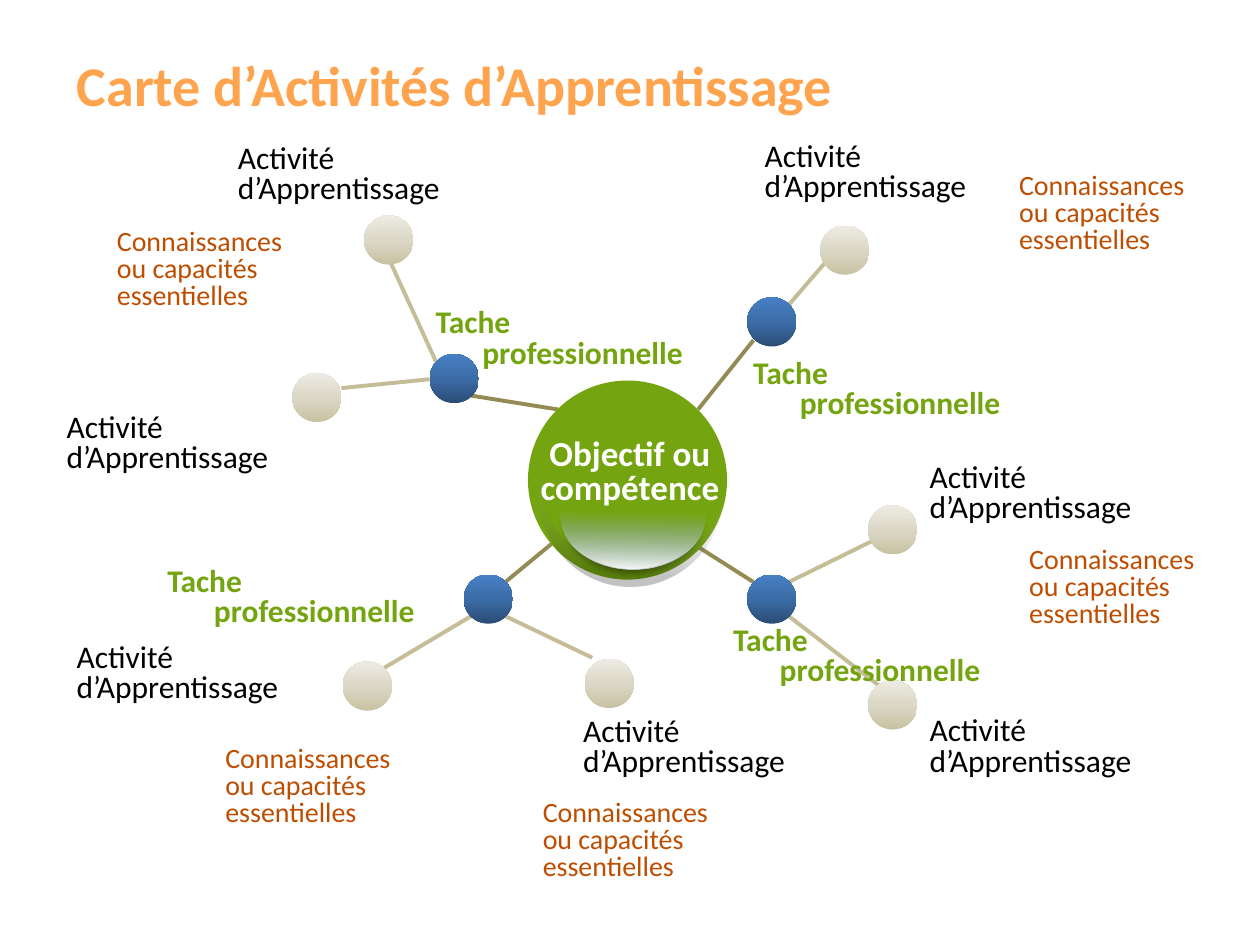
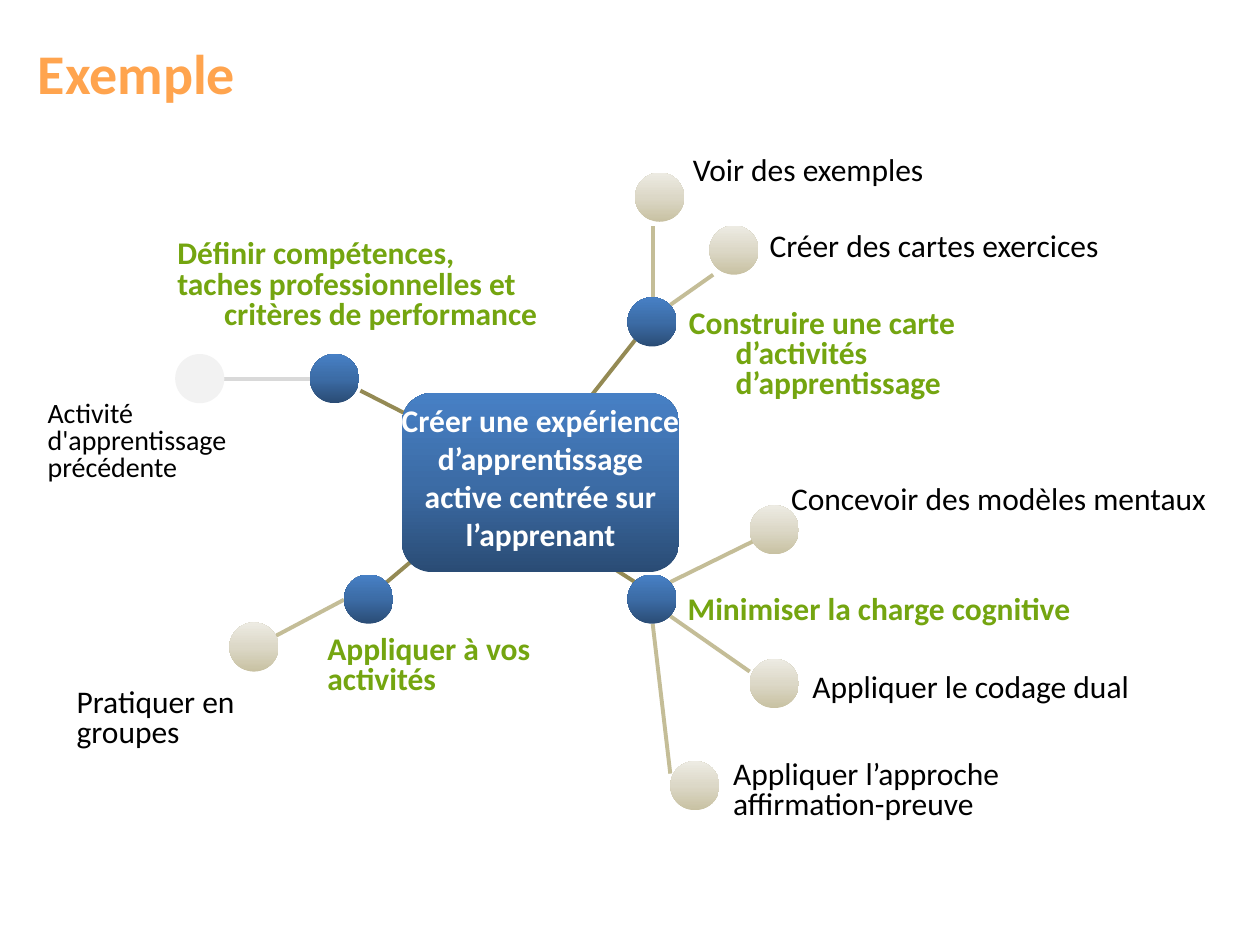
"""Build two learning-activity maps: the general model and a worked example."""
from dataclasses import dataclass

from lxml.etree import SubElement
from pptx import Presentation
from pptx.dml.color import RGBColor
from pptx.enum.shapes import MSO_CONNECTOR, MSO_SHAPE
from pptx.enum.text import MSO_ANCHOR as ANCHOR, MSO_AUTO_SIZE, PP_ALIGN as ALIGN
from pptx.oxml import parse_xml
from pptx.oxml.ns import nsdecls, qn
from pptx.util import Inches, Pt


@dataclass(frozen=True)
class Theme:
    font: str = "Calibri"
    title: str = "FFA44E"
    green: str = "74A510"
    rust: str = "BF4D00"
    black: str = "000000"
    white: str = "FFFFFF"
    pale: str = "F2F2F2"
    trunk: str = "948A54"
    branch: str = "C4BD97"
    faded: str = "D9D9D9"
    blue: tuple = ((0, "2A4C75", 100), (50, "3C6CA6", 100), (100, "4780C5", 100))
    beige: tuple = ((0, "C8C1A2", 100), (50, "DCD8C7", 100), (100, "EDEBE3", 100))
    gloss: tuple = ((0, "FFFFFF", 100), (54, "A4C4FF", 0))
    shade: tuple = ((24, "000000", 24), (100, "FFFFFF", 0))
    title_size: int = 32
    hub_size: int = 20
    size: int = 18
    small: int = 16
    line_width: float = 2.25


T = Theme()
NODE = 0.39

LABELS = {
    "task": dict(color=T.green, bold=True, hanging=True),
    "activity": dict(color=T.black, anchor=ANCHOR.MIDDLE),
    "previous": dict(color=T.black, size=T.small, anchor=ANCHOR.MIDDLE),
    "knowledge": dict(color=T.rust, size=T.small),
    "goal": dict(color=T.white, size=T.hub_size, bold=True, hanging=True, align=ALIGN.CENTER),
    "center": dict(color=T.white, bold=True, align=ALIGN.CENTER, anchor=ANCHOR.MIDDLE, spacing=1.0),
}

TASK = "Tache professionnelle"
ACTIVITY = "Activité\nd’Apprentissage"
KNOWLEDGE = "Connaissances ou capacités essentielles"

MODEL = dict(
    title=("Carte d’Activités d’Apprentissage", (0.51, 0.36, 9.25, 0.61)),
    lines={
        T.trunk: [(5.54, 3.25, 5.98, 2.7), (5.54, 4.34, 5.98, 4.62),
                  (4.41, 4.29, 4.01, 4.62), (4.43, 3.25, 3.74, 3.14)],
        T.branch: [(6.26, 2.42, 6.57, 2.06), (6.26, 4.62, 6.95, 4.28), (6.26, 4.89, 7.13, 5.56),
                   (3.74, 4.89, 3.05, 5.3), (4.01, 4.89, 4.7, 5.22),
                   (3.46, 2.87, 3.08, 2.04), (3.41, 3.01, 2.71, 3.08)],
    },
    nodes={
        T.blue: [(5.93, 2.36), (5.93, 4.56), (3.68, 4.56), (3.41, 2.81)],
        T.beige: [(6.51, 1.79), (6.89, 4.01), (6.89, 5.4), (2.72, 5.25),
                  (4.64, 5.23), (2.89, 1.71), (2.32, 2.96)],
    },
    labels=[
        *[("task", TASK, (x, y, 2.44, 0.64))
          for x, y in [(5.87, 2.81), (5.71, 4.93), (3.35, 2.41), (1.22, 4.46)]],
        *[("activity", ACTIVITY, (x, y, 2.05, h))
          for x, y, h in [(7.28, 5.56, 0.75), (4.53, 5.56, 0.76), (7.28, 3.51, 0.83),
                          (5.97, 0.99, 0.77), (1.79, 1.01, 0.76), (0.43, 3.12, 0.81),
                          (0.51, 4.95, 0.81)]],
        *[("knowledge", KNOWLEDGE, (x, y, 1.57, 0.79))
          for x, y in [(7.99, 1.33), (8.07, 4.3), (1.69, 5.88), (4.21, 6.31), (0.83, 1.78)]],
    ],
)

EXAMPLE = dict(
    title=("Exemple", (0.2, 0.07, 9.8, 1)),
    lines={
        T.trunk: [(4.63, 3.22, 5.04, 2.7), (4.6, 4.34, 5.04, 4.62),
                  (3.46, 4.29, 3.07, 4.62), (3.35, 3.35, 2.86, 3.1)],
        T.branch: [(5.32, 2.42, 5.66, 2.18), (5.32, 4.62, 6.01, 4.28), (5.32, 4.89, 5.95, 5.33),
                   (2.73, 4.76, 1.88, 5.21), (5.18, 2.36, 5.18, 1.79), (5.18, 4.95, 5.32, 6.14)],
        T.faded: [(2.46, 3.01, 1.78, 3.01)],
    },
    nodes={
        T.blue: [(4.98, 2.36), (4.98, 4.56), (2.73, 4.56), (2.46, 2.81)],
        T.beige: [(5.63, 1.79), (5.95, 4.01), (5.95, 5.23), (1.82, 4.94),
                  (5.04, 1.37), (5.32, 6.04)],
        T.pale: [(1.39, 2.81)],
    },
    labels=[
        ("task", "Définir compétences,\ntaches professionnelles et critères de performance",
         (1.3, 1.86, 3.46, 0.88)),
        ("task", "Construire une carte d’activités d’apprentissage", (5.36, 2.41, 2.55, 0.88)),
        ("task", "Minimiser la charge cognitive", (5.35, 4.68, 3.35, 0.4)),
        ("task", "Appliquer à vos\nactivités", (2.49, 5, 1.96, 0.64)),
        ("previous", "Activité d'apprentissage précédente", (0.28, 3.2, 1.73, 0.62)),
        ("activity", "Créer des cartes exercices", (6.01, 1.76, 2.93, 0.42)),
        ("activity", "Concevoir des modèles mentaux", (6.18, 3.67, 3.54, 0.62)),
        ("activity", "Appliquer le codage dual", (6.35, 5.16, 2.74, 0.62)),
        ("activity", "Pratiquer en groupes", (0.51, 5.4, 1.49, 0.62)),
        ("activity", "Voir des exemples", (5.4, 1.16, 2.38, 0.42)),
        ("activity", "Appliquer l’approche affirmation-preuve", (5.72, 5.97, 2.66, 0.62)),
    ],
)


def rgb(color):
    return RGBColor.from_string(color)


def inches(box):
    return [Inches(v) for v in box]


def set_gradient(sp, stops, angle):
    gs = "".join(
        f'<a:gs pos="{pos * 1000}"><a:srgbClr val="{color}">'
        f'<a:alpha val="{alpha * 1000}"/></a:srgbClr></a:gs>'
        for pos, color, alpha in stops)
    sp.fill.background()
    spPr = sp._element.spPr
    spPr.replace(spPr.find(qn("a:noFill")), parse_xml(
        f'<a:gradFill rotWithShape="1" {nsdecls("a")}><a:gsLst>{gs}</a:gsLst>'
        f'<a:lin ang="{angle * 60000}" scaled="0"/></a:gradFill>'))


def add_shape(slide, kind, box, fill, angle=270):
    sp = slide.shapes.add_shape(kind, *inches(box))
    if isinstance(fill, tuple):
        set_gradient(sp, fill, angle)
    else:
        sp.fill.solid()
        sp.fill.fore_color.rgb = rgb(fill)
    sp.line.fill.background()
    sp.shadow.inherit = False
    return sp


def add_line(slide, ends, color):
    line = slide.shapes.add_connector(MSO_CONNECTOR.STRAIGHT, *inches(ends))
    line.line.color.rgb = rgb(color)
    line.line.width = Pt(T.line_width)
    SubElement(line._element.spPr, qn("a:effectLst"))


def write(sp, text, color, size=T.size, bold=False, hanging=False,
          align=ALIGN.LEFT, anchor=ANCHOR.TOP, spacing=0.8):
    tf = sp.text_frame
    tf.text = text
    tf.word_wrap = True
    tf.auto_size = MSO_AUTO_SIZE.NONE
    tf.vertical_anchor = anchor
    for p in tf.paragraphs:
        p.alignment = align
        p.line_spacing = spacing
        p.font.name = T.font
        p.font.size = Pt(size)
        p.font.bold = bold
        p.font.color.rgb = rgb(color)
        if hanging:
            pPr = p._p.get_or_add_pPr()
            pPr.set("marL", str(Inches(0.38)))
            pPr.set("indent", str(Inches(-0.37)))


def add_label(slide, style, text, box):
    write(slide.shapes.add_textbox(*inches(box)), text, **LABELS[style])


def add_map(prs, content, add_hub):
    slide = prs.slides.add_slide(prs.slide_layouts[5])
    text, box = content["title"]
    title = slide.shapes.title
    title.left, title.top, title.width, title.height = inches(box)
    write(title, text, T.title, T.title_size, bold=True, anchor=ANCHOR.MIDDLE, spacing=1.0)
    for color, lines in content["lines"].items():
        for ends in lines:
            add_line(slide, ends, color)
    for fill, nodes in content["nodes"].items():
        for x, y in nodes:
            add_shape(slide, MSO_SHAPE.OVAL, (x, y, NODE, NODE), fill)
    add_hub(slide)
    for label in content["labels"]:
        add_label(slide, *label)


def add_goal(slide):
    add_shape(slide, MSO_SHAPE.OVAL, (4.19, 3.02, 1.58, 1.58), T.green)
    gloss = add_shape(slide, MSO_SHAPE.OVAL, (4.45, 3.67, 1.15, 0.85), T.gloss, 271)
    gloss._element.spPr.find(qn("a:effectLst")).append(parse_xml(
        f'<a:outerShdw {nsdecls("a")} blurRad="{Pt(3.1)}" dist="{Pt(1.8)}" dir="5400000">'
        f'<a:srgbClr val="{T.black}"><a:alpha val="35000"/></a:srgbClr></a:outerShdw>'))
    add_label(slide, "goal", "Objectif ou\ncompétence", (4.13, 3.44, 1.73, 0.7))
    moon = add_shape(slide, MSO_SHAPE.MOON, (4.6, 3.55, 0.74, 1.46), T.shade, 0)
    moon.adjustments[0] = 0.19
    moon.rotation = 275.9


def add_center(slide):
    add_shape(slide, MSO_SHAPE.ROUNDED_RECTANGLE, (3.19, 3.12, 2.2, 1.42), T.blue)
    add_label(slide, "center",
              "Créer une expérience d’apprentissage\vactive centrée sur l’apprenant",
              (2.95, 2.96, 2.68, 1.65))


def main():
    prs = Presentation()
    prs.slide_width, prs.slide_height = Inches(10), Inches(7.5)
    add_map(prs, MODEL, add_goal)
    add_map(prs, EXAMPLE, add_center)
    prs.save("out.pptx")


if __name__ == "__main__":
    main()
